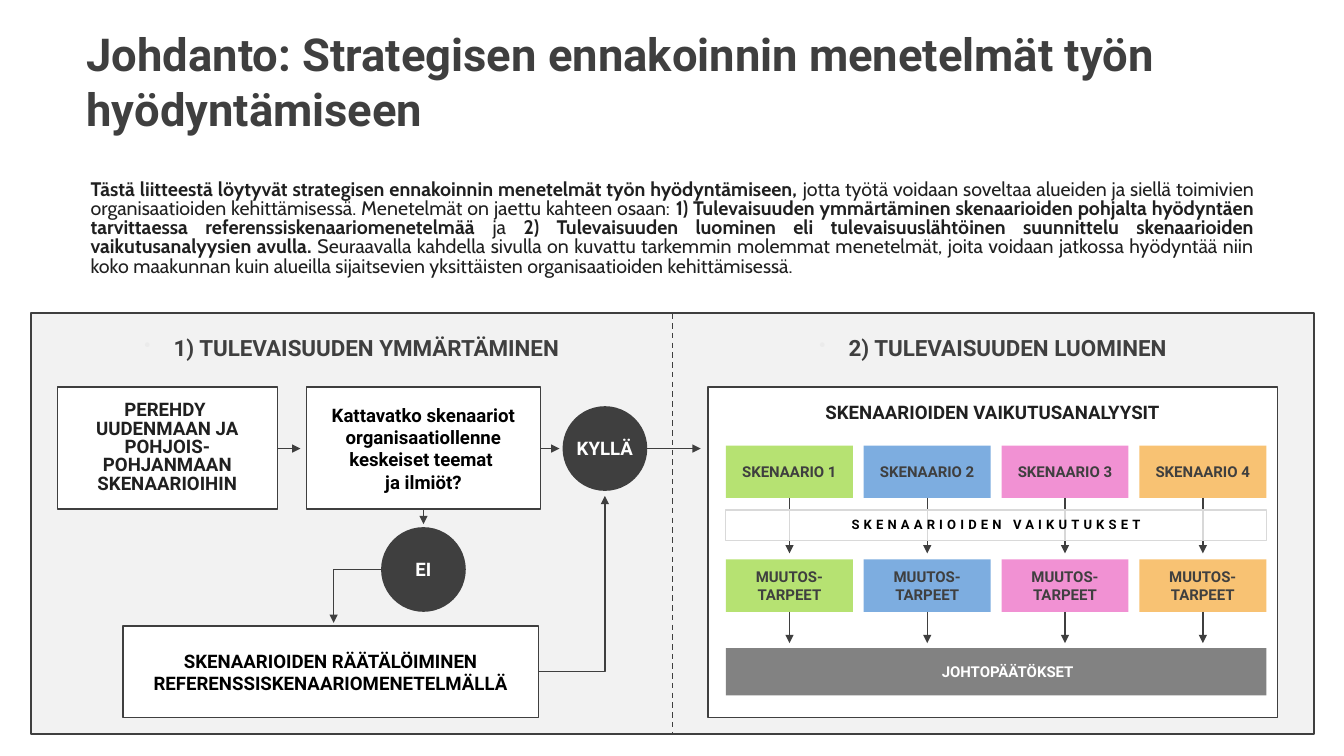
from copy import deepcopy
from dataclasses import dataclass
from typing import Optional

from pptx import Presentation
from pptx.dml.color import RGBColor
from pptx.enum.dml import MSO_LINE
from pptx.enum.shapes import MSO_CONNECTOR, MSO_SHAPE
from pptx.enum.text import MSO_ANCHOR, PP_ALIGN
from pptx.oxml.ns import qn
from pptx.util import Inches, Pt
from lxml.etree import SubElement

COLORS = {
    "dark": "3F3F3F", "ink": "202020", "black": "000000", "white": "FFFFFF",
    "panel": "F2F2F2", "gray": "828282", "border": "D9D9D9", "bullet": "EBEBEB",
    "green": "B6E272", "blue": "7DADE0", "pink": "F191D3", "orange": "F8C273",
}


@dataclass
class Text:
    """A newline starts a paragraph, \\v breaks a line, | switches bold off and on."""
    words: str
    size: float
    color: str = "dark"
    font: str = "Roboto"
    align: PP_ALIGN = PP_ALIGN.CENTER
    anchor: MSO_ANCHOR = MSO_ANCHOR.MIDDLE
    line_spacing: Optional[float] = None
    space_before: float = 0
    margins: tuple[float, float] = (0.1, 0.05)
    wrap: bool = True
    indent: tuple[float, float] = (0, 0)
    bullet: bool = False
    tracking: float = 0


@dataclass
class Box:
    left: float
    top: float
    width: float
    height: float
    text: Optional[Text] = None
    fill: Optional[str] = None
    line: Optional[str] = None
    weight: float = 1
    kind: MSO_SHAPE = MSO_SHAPE.RECTANGLE
    opacity: int = 100


@dataclass
class Link:
    start: tuple[float, float]
    end: tuple[float, float]
    bent: bool = False
    dashed: bool = False


def rgb(name: str) -> RGBColor:
    return RGBColor.from_string(COLORS[name])


def apply_format(target, values: dict) -> None:
    for name, value in values.items():
        setattr(target, name, value)


def write_paragraph(para, words: str, text: Text) -> None:
    apply_format(para, {"alignment": text.align, "space_before": Pt(text.space_before),
                        "line_spacing": text.line_spacing})
    properties = para._p.get_or_add_pPr()
    if any(text.indent):
        for name, value in zip(("marL", "indent"), text.indent):
            properties.set(name, str(Inches(value)))
    if text.bullet:
        color = SubElement(properties, qn("a:buClr"))
        SubElement(color, qn("a:srgbClr"), val=COLORS["bullet"])
        SubElement(properties, qn("a:buSzPct"), val="80000")
        SubElement(properties, qn("a:buChar"), char="•")
    for index, piece in enumerate(words.split("|")):
        for number, part in enumerate(piece.split("\v")):
            if number:
                para.add_line_break()
            span = para.add_run()
            span.text = part
            apply_format(span.font, {"name": text.font, "size": Pt(text.size),
                                     "bold": index % 2 == 0})
            span.font.color.rgb = rgb(text.color)
            if text.tracking:
                span._r.get_or_add_rPr().set("spc", str(int(text.tracking * 100)))
    # Line breaks take the size of the text around them
    for line_break in para._p.findall(qn("a:br")):
        line_break.append(deepcopy(span._r.rPr))


def write_text(frame, text: Text) -> None:
    across, down = (Inches(margin) for margin in text.margins)
    apply_format(frame, {"word_wrap": text.wrap, "vertical_anchor": text.anchor,
                         "margin_left": across, "margin_right": across,
                         "margin_top": down, "margin_bottom": down})
    for index, words in enumerate(text.words.split("\n")):
        para = frame.add_paragraph() if index else frame.paragraphs[0]
        write_paragraph(para, words, text)


def draw_box(page, box: Box) -> None:
    place = [Inches(v) for v in (box.left, box.top, box.width, box.height)]
    if box.fill or box.line:
        shape = page.shapes.add_shape(box.kind, *place)
        shape.shadow.inherit = False
        if box.fill:
            shape.fill.solid()
            shape.fill.fore_color.rgb = rgb(box.fill)
        else:
            shape.fill.background()
        if box.opacity < 100:
            color = shape._element.spPr.find(qn("a:solidFill")).find(qn("a:srgbClr"))
            SubElement(color, qn("a:alpha"), val=str(box.opacity * 1000))
        if box.line:
            shape.line.color.rgb = rgb(box.line)
            shape.line.width = Pt(box.weight)
        else:
            shape.line.fill.background()
    else:
        shape = page.shapes.add_textbox(*place)
    if box.text:
        write_text(shape.text_frame, box.text)


def draw_link(page, link: Link) -> None:
    kind = MSO_CONNECTOR.ELBOW if link.bent else MSO_CONNECTOR.STRAIGHT
    connector = page.shapes.add_connector(kind, *(Inches(v) for v in link.start + link.end))
    connector.line.color.rgb = rgb("dark")
    connector.line.width = Pt(1)
    properties = connector._element.spPr
    if link.bent:
        properties.find(qn("a:prstGeom")).set("prst", "bentConnector2")
    if link.dashed:
        connector.line.dash_style = MSO_LINE.DASH
    else:
        SubElement(properties.find(qn("a:ln")), qn("a:tailEnd"), type="triangle")
    SubElement(properties, qn("a:effectLst"))


def heading(words: str) -> Text:
    return Text(words, 16, anchor=MSO_ANCHOR.TOP, line_spacing=0.82, margins=(0.1, 0.25),
                indent=(0.29, -0.29), bullet=True)


def step(left: float, top: float, width: float, height: float, text: Text) -> Box:
    return Box(left, top, width, height, text, "white", "dark")


def answer(left: float, top: float, words: str) -> Box:
    return Box(left, top, 0.84, 0.84, Text(words, 13.3, "white", margins=(0, 0.05)),
               "dark", kind=MSO_SHAPE.OVAL)


INTRO = (
    "Tästä liitteestä löytyvät strategisen ennakoinnin menetelmät työn hyödyntämiseen, "
    "|jotta työtä voidaan soveltaa alueiden ja siellä toimivien organisaatioiden "
    "kehittämisessä. Menetelmät on jaettu kahteen osaan: "
    "|1) Tulevaisuuden ymmärtäminen skenaarioiden pohjalta hyödyntäen tarvittaessa "
    "referenssiskenaariomenetelmää |ja |2) Tulevaisuuden luominen eli tulevaisuuslähtöinen "
    "suunnittelu skenaarioiden vaikutusanalyysien avulla. "
    "|Seuraavalla kahdella sivulla on kuvattu tarkemmin molemmat menetelmät, joita voidaan "
    "jatkossa hyödyntää niin koko maakunnan kuin alueilla sijaitsevien yksittäisten "
    "organisaatioiden kehittämisessä."
)

# Title, introduction and the two panels
PARTS = [
    Box(0.76, 0.21, 11.81, 1.18, Text(
        "Johdanto: Strategisen ennakoinnin menetelmät työn hyödyntämiseen", 32.4,
        align=PP_ALIGN.LEFT)),
    Box(0.8, 1.61, 11.74, 1.32, Text(INTRO, 14, "ink", "Cabin", PP_ALIGN.JUSTIFY,
                                    line_spacing=0.82, space_before=6)),
    Box(0.31, 3.11, 6.36, 4.17, heading("1) TULEVAISUUDEN YMMÄRTÄMINEN"), "panel"),
    Box(6.67, 3.11, 6.36, 4.17, heading("2) TULEVAISUUDEN LUOMINEN"), "panel"),
    Box(0.31, 3.11, 12.72, 4.17, line="dark", weight=1.5),
    Link((6.67, 3.11), (6.67, 7.28), dashed=True),
]

# Left panel: flow of steps and answers
PARTS += [
    step(0.57, 3.84, 2.18, 1.21, Text(
        "PEREHDY \vUUDENMAAN JA POHJOIS-POHJANMAAN SKENAARIOIHIN", 13.3, "ink",
        line_spacing=0.82, space_before=6)),
    step(3.04, 3.84, 2.32, 1.21, Text(
        "Kattavatko skenaariot organisaatiollenne keskeiset teemat \vja ilmiöt?", 13.3,
        "black", space_before=10)),
    step(1.22, 6.21, 4.12, 0.91, Text(
        "SKENAARIOIDEN RÄÄTÄLÖIMINEN REFERENSSISKENAARIOMENETELMÄLLÄ", 13.3, "black",
        space_before=10)),
    answer(3.78, 5.23, "EI"),
    answer(5.58, 4.03, "KYLLÄ"),
    Link((2.75, 4.45), (2.98, 4.45)),
    Link((4.2, 5.05), (4.2, 5.2)),
    Link((3.78, 5.65), (3.31, 6.18), bent=True),
    Link((5.34, 6.66), (6, 4.92), bent=True),
    Link((5.36, 4.45), (5.55, 4.45)),
    Link((6.42, 4.45), (6.95, 4.45)),
    step(7.02, 3.84, 5.65, 3.28, Text(
        "SKENAARIOIDEN VAIKUTUSANALYYSIT", 13.3, "ink", anchor=MSO_ANCHOR.TOP,
        line_spacing=0.82, margins=(0.1, 0.18))),
]

# Right panel: one column per scenario, then the bars across them
LEFT, SPAN, WIDTH = 7.2, 5.36, 1.26
for index, fill in enumerate(("green", "blue", "pink", "orange")):
    left = LEFT + index * (SPAN - WIDTH) / 3
    middle = left + WIDTH / 2
    PARTS += [
        Box(left, 4.42, WIDTH, 0.52, Text(f"SKENAARIO {index + 1}", 10.7, wrap=False), fill),
        Box(left, 5.55, WIDTH, 0.52, Text("MUUTOS-\nTARPEET", 10.7, wrap=False), fill),
        Link((middle, 4.94), (middle, 5.49)),
        Link((middle, 6.07), (middle, 6.38)),
    ]
PARTS += [
    Box(LEFT, 5.06, SPAN, 0.3, Text("SKENAARIOIDEN VAIKUTUKSET", 9.3, "black",
                                    margins=(0.16, 0), line_spacing=0.9, tracking=3),
        "white", "border", 0.75, opacity=80),
    Box(LEFT, 6.43, SPAN, 0.47, Text("JOHTOPÄÄTÖKSET", 10.7, "white", space_before=4,
                                     indent=(0.45, -0.22)), "gray"),
]


def main() -> None:
    deck = Presentation()
    apply_format(deck, {"slide_width": Inches(13.33), "slide_height": Inches(7.5)})
    page = deck.slides.add_slide(deck.slide_layouts[6])
    for part in PARTS:
        if isinstance(part, Box):
            draw_box(page, part)
        else:
            draw_link(page, part)
    deck.save("out.pptx")


if __name__ == "__main__":
    main()
